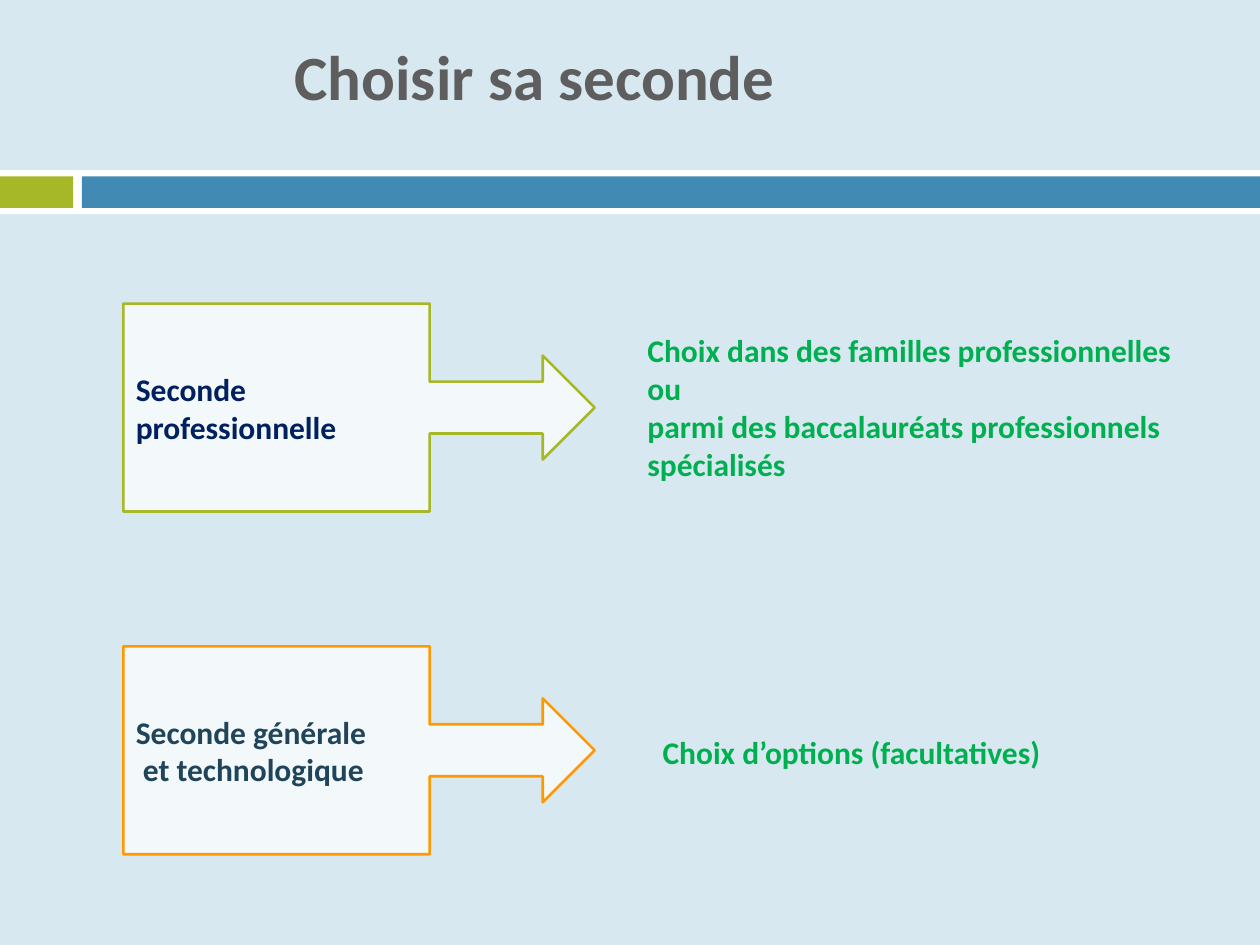
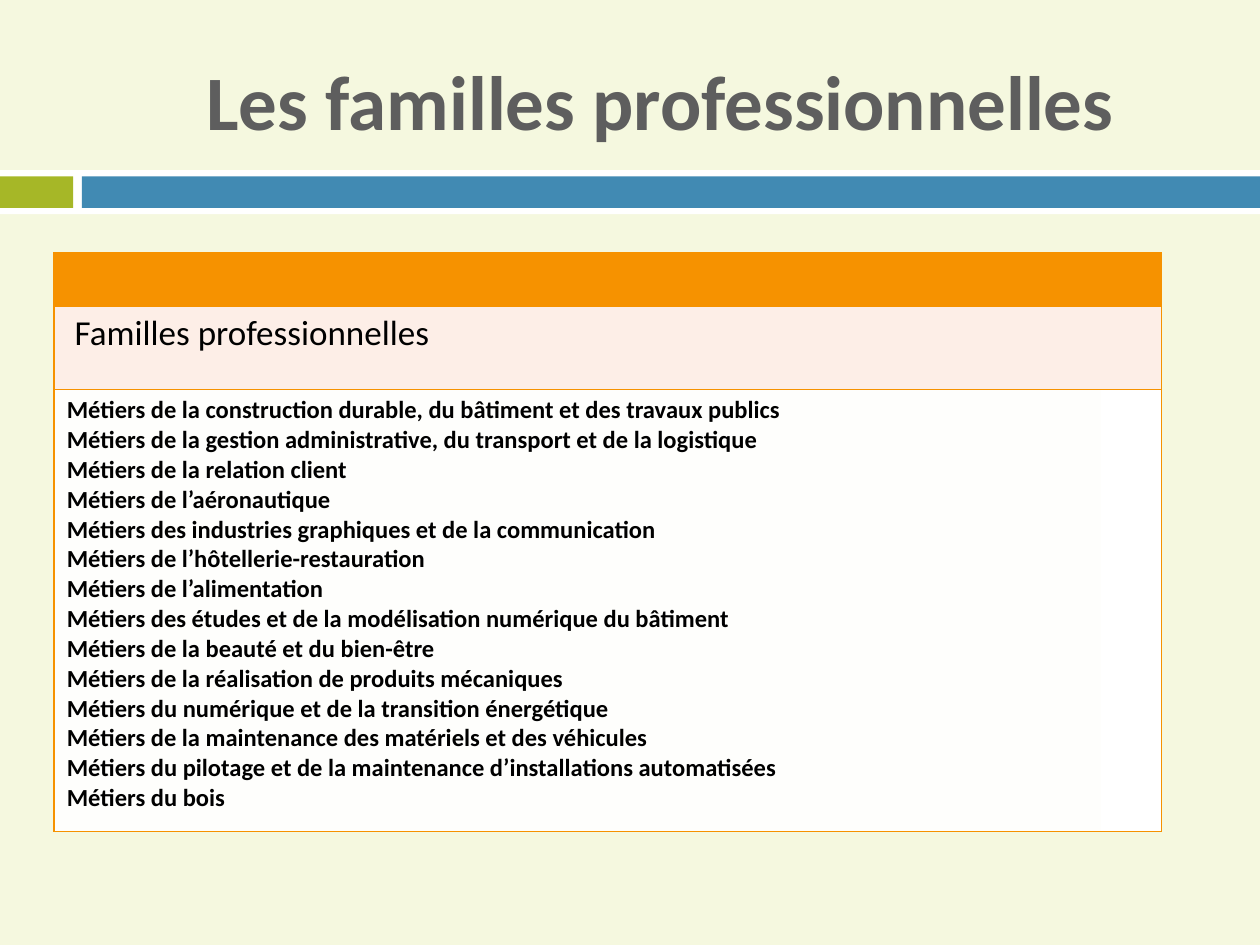
from itertools import product
from lxml.etree import SubElement as Sub
from pptx import Presentation
from pptx.dml.color import RGBColor as Rgb
from pptx.enum.shapes import MSO_SHAPE as Geo
from pptx.enum.text import MSO_ANCHOR as Anchor, PP_ALIGN as Align
from pptx.oxml.ns import qn
from pptx.util import Inches, Pt

HUES = {
    "sky": "D8E8F1", "cream": "F5F8DF", "white": "FFFFFF", "lime": "A6B727",
    "blue": "418AB3", "gray": "5E5E5E", "green": "00B050", "navy": "002060",
    "slate": "20455A", "gold": "FF9900", "orange": "F69200", "blush": "FDEEE7",
    "black": "000000",
}
COLS, ROWS = 100, 75
TRADES = [
    "Métiers de la construction durable, du bâtiment et des travaux publics",
    "Métiers de la gestion administrative, du transport et de la logistique",
    "Métiers de la relation client",
    "Métiers de l’aéronautique",
    "Métiers des industries graphiques et de la communication",
    "Métiers de l’hôtellerie-restauration",
    "Métiers de l’alimentation",
    "Métiers des études et de la modélisation numérique du bâtiment",
    "Métiers de la beauté et du bien-être",
    "Métiers de la réalisation de produits mécaniques",
    "Métiers du numérique et de la transition énergétique",
    "Métiers de la maintenance des matériels et des véhicules",
    "Métiers du pilotage et de la maintenance d’installations automatisées",
    "Métiers du bois",
]


def tint(name):
    return Rgb.from_string(HUES[name])


class Deck:
    """Holds the shared style and the current slide."""

    def __init__(self):
        self.prs = Presentation()
        self.prs.slide_width, self.prs.slide_height = Inches(10), Inches(7.5)
        self.slide = None

    def wide(self, cols):
        return round(self.prs.slide_width * cols / COLS)

    def high(self, rows):
        return round(self.prs.slide_height * rows / ROWS)

    def place(self, left, top, width, height):
        return self.wide(left), self.high(top), self.wide(width), self.high(height)

    def page(self, hue):
        self.slide = self.prs.slides.add_slide(self.prs.slide_layouts[6])
        back = self.slide.background.fill
        back.solid()
        back.fore_color.rgb = tint(hue)
        self.shape(Geo.RECTANGLE, (0, 13.5, COLS, 3.5), "white")
        self.shape(Geo.RECTANGLE, (0, 14, 5.8, 2.5), "lime")
        self.shape(Geo.RECTANGLE, (6.5, 14, 93.5, 2.5), "blue")

    def paint(self, item, root, hue, alpha=100):
        item.fill.solid()
        item.fill.fore_color.rgb = tint(hue)
        if alpha < 100:
            dye = root.find(qn("a:solidFill"))[0]
            Sub(dye, qn("a:alpha"), val=str(alpha * 1000))

    def shape(self, geo, box, hue, alpha=100, edge=None):
        item = self.slide.shapes.add_shape(geo, *self.place(*box))
        item.shadow.inherit = False
        self.paint(item, item.element.spPr, hue, alpha)
        if edge:
            item.line.color.rgb = tint(edge)
            item.line.width = Pt(1.5)
        else:
            item.line.fill.background()
        return item

    def fill(self, frame, lines, size, hue, bold=True, align=Align.LEFT):
        frame.word_wrap = True
        style = {"name": "Calibri", "size": Pt(size), "bold": bold}
        for i, line in enumerate(lines):
            para = frame.add_paragraph() if i else frame.paragraphs[0]
            para.text, para.alignment = line, align
            for key, value in style.items():
                setattr(para.font, key, value)
            para.font.color.rgb = tint(hue)

    def text(self, box, lines, size=18, hue="green", anchor=Anchor.TOP, align=Align.LEFT):
        frame = self.slide.shapes.add_textbox(*self.place(*box)).text_frame
        frame.vertical_anchor = anchor
        self.fill(frame, lines, size, hue, align=align)

    def title(self, box, line, size, align=Align.LEFT):
        self.text(box, [line], size, "gray", Anchor.MIDDLE, align)

    def callout(self, top, lines, hue, edge):
        item = self.shape(Geo.RIGHT_ARROW_CALLOUT, (9.8, top, 37.4, 16.5), "white", 71, edge)
        item.text_frame.vertical_anchor = Anchor.MIDDLE
        self.fill(item.text_frame, lines, 18, hue)

    def border(self, cell, sides):
        props = cell._tc.get_or_add_tcPr()
        for side in "LRTB":
            line = Sub(props, qn("a:ln" + side), w=str(Pt(1)))
            if side in sides:
                Sub(Sub(line, qn("a:solidFill")), qn("a:srgbClr"), val=HUES["orange"])
            else:
                Sub(line, qn("a:noFill"))
        return props

    def table(self, left, top, widths, heights, fills):
        box = self.place(left, top, sum(widths), sum(heights))
        grid = self.slide.shapes.add_table(len(heights), len(widths), *box).table
        grid.first_row = grid.horz_banding = False
        for col, width in zip(grid.columns, widths):
            col.width = self.wide(width)
        for row, height in zip(grid.rows, heights):
            row.height = self.high(height)
        for r, c in product(range(len(heights)), range(len(widths))):
            cell = grid.cell(r, c)
            sides = "TB" + "L" * (c == 0) + "R" * (c == len(widths) - 1)
            props = self.border(cell, sides)
            hue, alpha = fills[r]
            self.paint(cell, props, hue, 100 if c else alpha)
        return grid


def main():
    deck = Deck()
    deck.page("sky")
    deck.title((22.4, 0.6, 85.4, 10.8), "Choisir sa seconde", 36, Align.JUSTIFY)
    deck.text((50.4, 25.8, 49.6, 13.1), [
        "Choix dans des familles professionnelles", "ou",
        "parmi des baccalauréats professionnels spécialisés"])
    deck.callout(51.3, ["Seconde générale", " et technologique"], "slate", "gold")
    deck.callout(24.1, ["Seconde", "professionnelle"], "navy", "lime")
    deck.text((51.6, 57.7, 33.9, 4), ["Choix d’options (facultatives)"])

    deck.page("cream")
    grid = deck.table(4.3, 20.1, (83.1, 4.8), (4.2, 6.6, 35.1),
                      (("orange", 100), ("blush", 100), ("white", 91)))
    deck.fill(grid.cell(1, 0).text_frame, [" Familles professionnelles"], 20, "black", False)
    deck.fill(grid.cell(2, 0).text_frame, TRADES, 14, "black")
    deck.title((15.4, 2.5, 80.5, 10.8), "Les familles professionnelles", 44)
    deck.prs.save("out.pptx")


if __name__ == "__main__":
    main()
